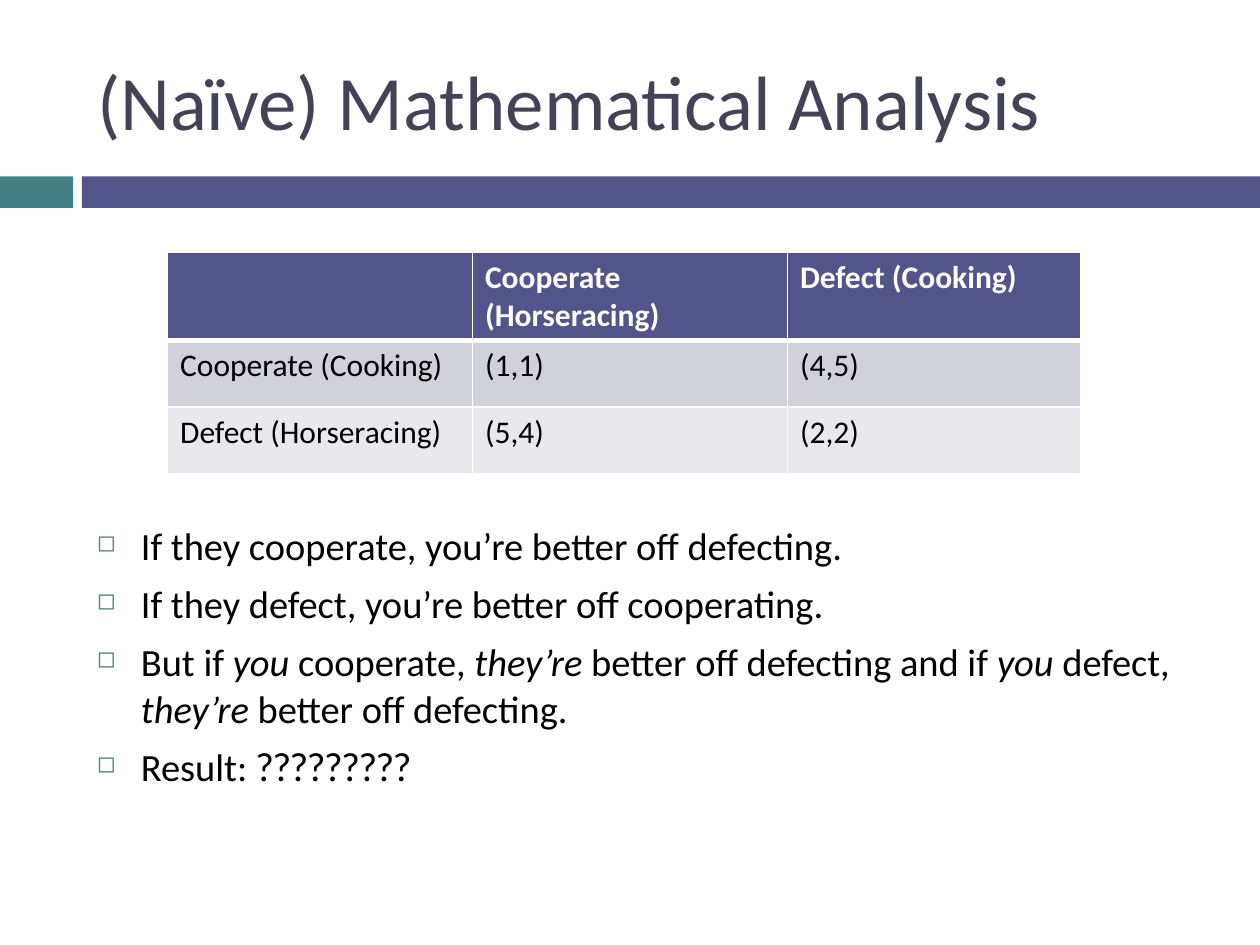
from lxml import etree
from pptx import Presentation
from pptx.dml.color import RGBColor
from pptx.enum.shapes import MSO_SHAPE
from pptx.enum.text import MSO_ANCHOR, PP_ALIGN
from pptx.oxml.ns import qn
from pptx.util import Inches, Pt

RECTANGLE = MSO_SHAPE.RECTANGLE
MIDDLE, LEFT = MSO_ANCHOR.MIDDLE, PP_ALIGN.LEFT
TITLE_ONLY = 5

PAYOFFS = [
    ["", "Cooperate (Horseracing)", "Defect (Cooking)"],
    ["Cooperate (Cooking)", "(1,1)", "(4,5)"],
    ["Defect (Horseracing)", "(5,4)", "(2,2)"],
]
PLAIN, ITALIC, LATO = {}, {"italic": True}, {"name": "Lato"}
ARGUMENT = [
    [("If they cooperate, you’re better off defecting.", PLAIN)],
    [("If they defect, you’re better off cooperating.", PLAIN)],
    [("But if ", PLAIN), ("you", ITALIC), (" cooperate, ", PLAIN),
     ("they’re", ITALIC), (" better off defecting and if ", PLAIN),
     ("you", ITALIC), (" defect, ", PLAIN), ("they’re", ITALIC),
     (" better off defecting.", PLAIN)],
    [("Result: ", PLAIN), ("?????????", LATO)],
]


def rgb(hex_color):
    return RGBColor.from_string(hex_color)


def add_xml(parent, tag, **attributes):
    return etree.SubElement(parent, qn(tag), attributes)


class SlideBuilder:
    font = "Calibri"
    teal, purple, heading = "438086", "53548A", "424456"
    black, white = "000000", "FFFFFF"
    bands = ["D1D1DA", "E9E9ED"]

    def __init__(self, slide):
        self.slide = slide

    def run(self, paragraph, text, color, size, **formats):
        run = paragraph.add_run()
        run.text = text
        run.font.color.rgb = rgb(color)
        values = {"name": self.font, "size": Pt(size), **formats}
        for attribute, value in values.items():
            setattr(run.font, attribute, value)

    def title(self, text, left, top, width, height):
        title = self.slide.shapes.title
        box = {"left": left, "top": top, "width": width, "height": height}
        for attribute, value in box.items():
            setattr(title, attribute, Inches(value))
        title.text_frame.vertical_anchor = MIDDLE
        paragraph = title.text_frame.paragraphs[0]
        paragraph.alignment = LEFT
        self.run(paragraph, text, self.heading, 44)

    def bar(self, color, *box):
        bar = self.slide.shapes.add_shape(RECTANGLE, *map(Inches, box))
        bar.shadow.inherit = False
        bar.fill.solid()
        bar.fill.fore_color.rgb = rgb(color)
        bar.line.fill.background()

    def bullets(self, items, *box):
        frame = self.slide.shapes.add_textbox(*map(Inches, box)).text_frame
        frame.word_wrap = True
        for index, item in enumerate(items):
            paragraph = frame.add_paragraph() if index else frame.paragraphs[0]
            paragraph.space_before = Pt(7)
            self.bullet_mark(paragraph)
            for text, formats in item:
                self.run(paragraph, text, self.black, 22, **formats)

    def bullet_mark(self, paragraph):
        properties = paragraph._p.get_or_add_pPr()
        indent = Inches(0.35)
        properties.set("marL", str(indent))
        properties.set("indent", str(-indent))
        add_xml(add_xml(properties, "a:buClr"), "a:srgbClr", val=self.teal)
        add_xml(properties, "a:buSzPct", val="60000")
        add_xml(properties, "a:buChar", char="◻")

    def borders(self, cell, **widths):
        """Draw white cell edges; widths in points, keyed L, R, T, B in that order."""
        properties = cell._tc.get_or_add_tcPr()
        for side, width in widths.items():
            edge = add_xml(properties, f"a:ln{side}", w=str(Pt(width)))
            add_xml(add_xml(edge, "a:solidFill"), "a:srgbClr", val=self.white)

    def table(self, rows, left, top, widths, heights):
        box = map(Inches, (left, top, sum(widths), sum(heights)))
        table = self.slide.shapes.add_table(len(rows), len(widths), *box).table
        for column, width in zip(table.columns, widths):
            column.width = Inches(width)
        for r, (texts, height) in enumerate(zip(rows, heights)):
            table.rows[r].height = Inches(height)
            header = r == 0
            fill = self.purple if header else self.bands[(r - 1) % 2]
            for c, text in enumerate(texts):
                cell = table.cell(r, c)
                self.borders(cell, L=1, R=1, T=3 if r == 1 else 1,
                             B=3 if header else 1)
                cell.fill.solid()
                cell.fill.fore_color.rgb = rgb(fill)
                if text:
                    self.run(cell.text_frame.paragraphs[0], text,
                             self.white if header else self.black, 18, bold=header)


def main():
    presentation = Presentation()
    presentation.slide_width = Inches(10)
    presentation.slide_height = Inches(7.5)
    layout = presentation.slide_layouts[TITLE_ONLY]
    builder = SlideBuilder(presentation.slides.add_slide(layout))
    builder.bar(builder.teal, 0, 1.4, 0.58, 0.25)
    builder.bar(builder.purple, 0.65, 1.4, 9.35, 0.25)
    builder.title("(Naïve) Mathematical Analysis", 0.67, 0.25, 8.92, 1.08)
    builder.bullets(ARGUMENT, 0.67, 4.09, 8.92, 2.58)
    builder.table(PAYOFFS, 1.33, 2, [2.42, 2.5, 2.33], [0.7, 0.53, 0.53])
    presentation.save("out.pptx")


if __name__ == "__main__":
    main()
